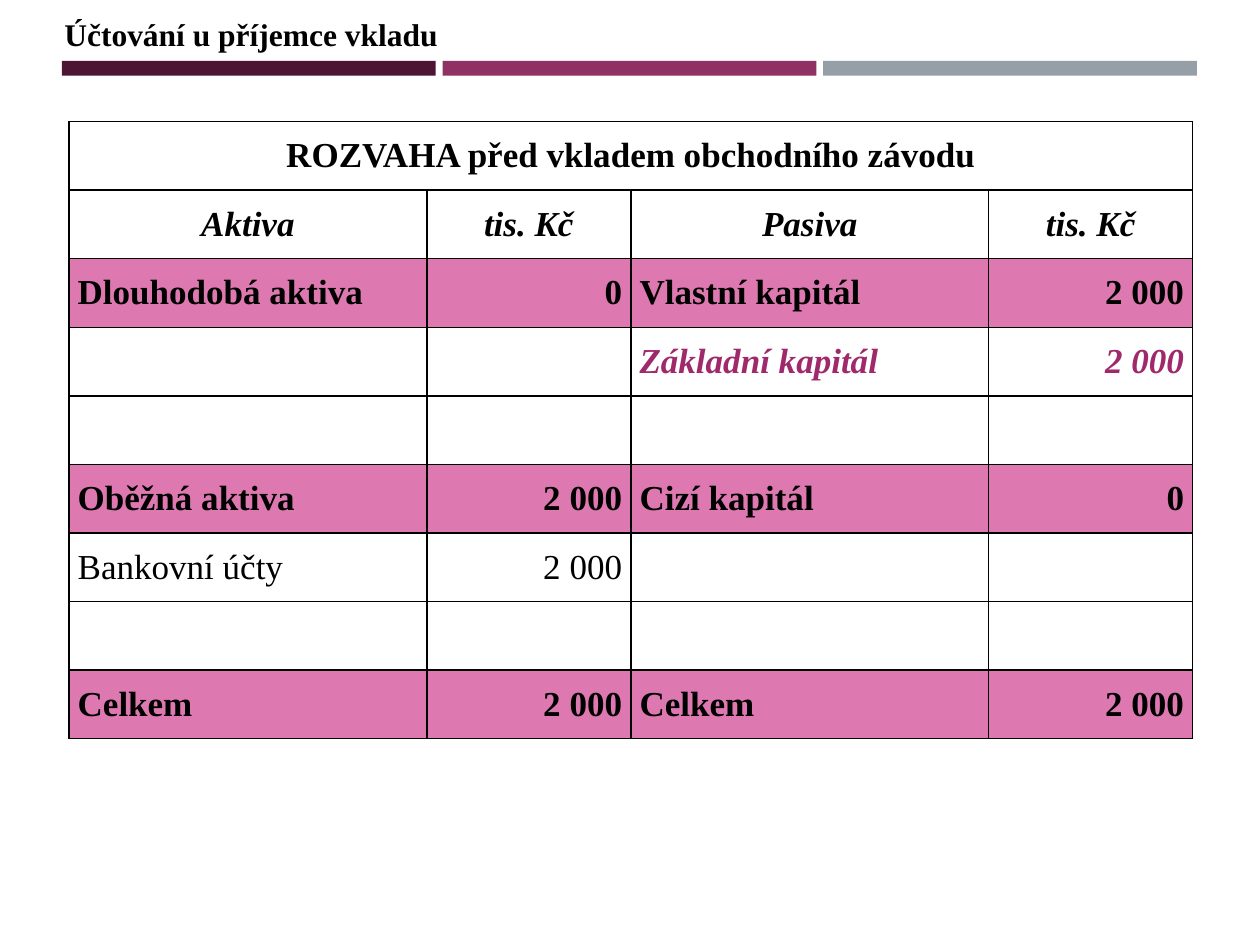
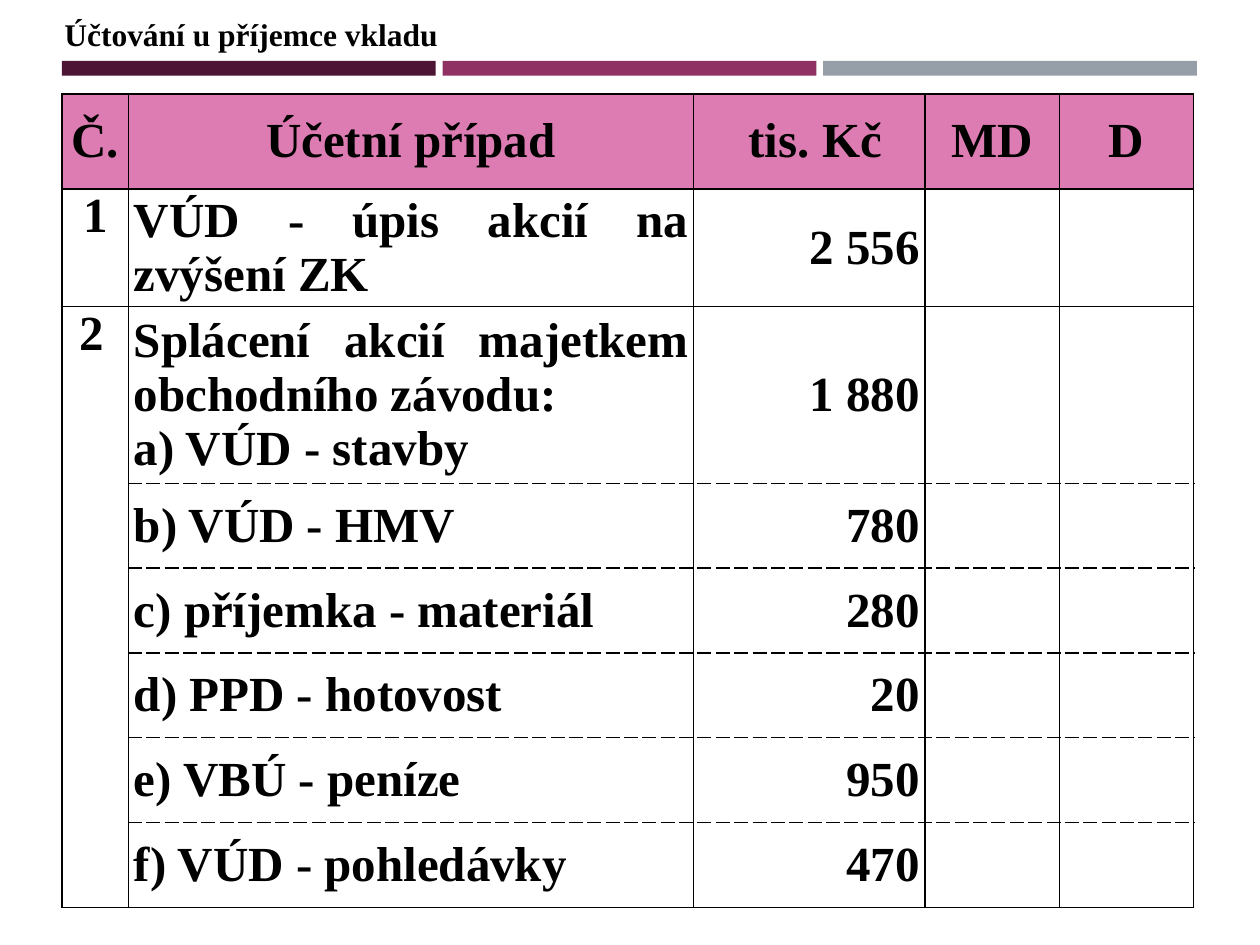
"""Build two slides on booking a contribution at its recipient."""
from dataclasses import dataclass
from typing import Optional

from lxml.etree import SubElement
from pptx import Presentation
from pptx.dml.color import RGBColor
from pptx.enum.shapes import MSO_SHAPE
from pptx.enum.text import MSO_ANCHOR, MSO_AUTO_SIZE, PP_ALIGN
from pptx.oxml.ns import qn
from pptx.util import Pt

BLACK = RGBColor(0x00, 0x00, 0x00)
PLUM = RGBColor(0x4D, 0x14, 0x34)
WINE = RGBColor(0x90, 0x31, 0x63)
GREY = RGBColor(0x96, 0x9F, 0xA7)
PINK = RGBColor(0xDD, 0x79, 0xB0)
ROSE = RGBColor(0xDD, 0x7C, 0xB2)
BERRY = RGBColor(0x9F, 0x29, 0x6B)
FONT = "Times New Roman"
TITLE = "Účtování u příjemce vkladu"
LEFT, MID, RIGHT, FULL = PP_ALIGN.LEFT, PP_ALIGN.CENTER, PP_ALIGN.RIGHT, PP_ALIGN.JUSTIFY
BANDS = (PLUM, WINE, GREY)


@dataclass
class Cell:
    text: str = ""
    align: PP_ALIGN = LEFT
    bold: bool = True
    slant: bool = False
    ink: RGBColor = BLACK
    fill: Optional[RGBColor] = None
    anchor: MSO_ANCHOR = MSO_ANCHOR.MIDDLE
    dashes: str = ""


@dataclass
class Grid:
    left: float
    top: float
    cols: list[float]
    rows: list[float]
    size: float
    pad: float
    cells: list[list[Cell]]
    merge: tuple[int, int, int, int]


def write(para, text: str, size: float, cell: Cell) -> None:
    """Add one run in the style of the cell."""
    para.alignment = cell.align
    run = para.add_run()
    run.text = text
    font = run.font
    font.name, font.size = FONT, Pt(size)
    font.bold, font.italic = cell.bold, cell.slant
    font.color.rgb = cell.ink


def edge(box, dashes: str) -> None:
    """Rule the four sides, dashing those named."""
    props = box._tc.get_or_add_tcPr()
    for side in "LRTB":
        line = SubElement(props, qn(f"a:ln{side}"), w=str(Pt(1)))
        fill = SubElement(line, qn("a:solidFill"))
        SubElement(fill, qn("a:srgbClr"), val=str(BLACK))
        SubElement(line, qn("a:prstDash"), val="dash" if side in dashes else "solid")


def paint(box, cell: Cell, grid: Grid) -> None:
    """Fill one table cell with rules, colour and text."""
    edge(box, cell.dashes)
    if cell.fill is None:
        box.fill.background()
    else:
        box.fill.solid()
        box.fill.fore_color.rgb = cell.fill
    box.margin_left = box.margin_right = Pt(grid.pad)
    box.margin_top = box.margin_bottom = Pt(0)
    box.vertical_anchor = cell.anchor
    if cell.text:
        frame = box.text_frame
        for i, text in enumerate(cell.text.split("\n")):
            para = frame.add_paragraph() if i else frame.paragraphs[0]
            write(para, text, grid.size, cell)


def draw(slide, grid: Grid) -> None:
    """Draw a grid as a table."""
    frame = slide.shapes.add_table(
        len(grid.rows), len(grid.cols), Pt(grid.left), Pt(grid.top),
        Pt(sum(grid.cols)), Pt(sum(grid.rows)))
    table = frame.table
    table.first_row = table.horz_banding = False
    for col, width in zip(table.columns, grid.cols):
        col.width = Pt(width)
    for row, height in zip(table.rows, grid.rows):
        row.height = Pt(height)
    for r, line in enumerate(grid.cells):
        for c, cell in enumerate(line):
            paint(table.cell(r, c), cell, grid)
    r1, c1, r2, c2 = grid.merge
    table.cell(r1, c1).merge(table.cell(r2, c2))


def brand(layout, slide) -> None:
    """Move three colour bands onto the layout."""
    for i, tone in enumerate(BANDS):
        band = slide.shapes.add_shape(
            MSO_SHAPE.RECTANGLE, Pt(35.4 + 217.5 * i), Pt(34.8), Pt(213.6), Pt(8.4))
        band.shadow.inherit = False
        band.fill.solid()
        band.fill.fore_color.rgb = tone
        band.line.fill.background()
        layout.shapes.element.append(band.element)


def head(slide) -> None:
    """Place and style the slide title."""
    title = slide.shapes.title
    title.left, title.top, title.width, title.height = Pt(29.6), Pt(5.2), Pt(230.4), Pt(29)
    frame = title.text_frame
    frame.word_wrap = False
    frame.auto_size = MSO_AUTO_SIZE.SHAPE_TO_FIT_TEXT
    frame.vertical_anchor = MSO_ANCHOR.TOP
    write(frame.paragraphs[0], TITLE, 18, Cell())


def pair(name: str, sum_: str, align: PP_ALIGN = LEFT, **look) -> list[Cell]:
    """Make a name cell and its amount cell."""
    return [Cell(name, align, **look), Cell(sum_, RIGHT, **look)]


def both(name: str, sum_: str, name2: str, sum2: str) -> list[Cell]:
    """Make a pink row with both balance sides."""
    return pair(name, sum_, fill=PINK) + pair(name2, sum2, FULL, fill=PINK)


def sheet() -> Grid:
    """Lay out the opening balance sheet."""
    void = pair("", "")
    cells = [
        [Cell("ROZVAHA před vkladem obchodního závodu", MID), Cell(), Cell(), Cell()],
        [Cell(t, MID, slant=True) for t in ("Aktiva", "tis. Kč", "Pasiva", "tis. Kč")],
        both("Dlouhodobá aktiva", "0", "Vlastní kapitál", "2 000"),
        void + pair("Základní kapitál", "2 000", FULL, slant=True, ink=BERRY),
        void + void,
        both("Oběžná aktiva", "2 000", "Cizí kapitál", "0"),
        pair("Bankovní účty", "2 000", bold=False) + void,
        void + void,
        both("Celkem", "2 000", "Celkem", "2 000"),
    ]
    return Grid(39.4, 69.5, [204.5, 116.6] * 2, [39.2] * 9, 20, 5, cells, (0, 0, 0, 3))


def ledger() -> Grid:
    """Lay out the list of entries."""
    heads = ("Č.", "Účetní případ", " tis. Kč", "MD", "D")
    parts = [
        ("Splácení akcií majetkem obchodního závodu:\na) VÚD - stavby", "1 880"),
        ("b) VÚD - HMV", "780"),
        ("c) příjemka - materiál", "280"),
        ("d) PPD - hotovost", "20"),
        ("e) VBÚ - peníze", "950"),
        ("f) VÚD - pohledávky", "470"),
    ]
    top = MSO_ANCHOR.TOP
    cells = [
        [Cell(t, MID, fill=ROSE) for t in heads],
        [Cell("1", MID, anchor=top),
         *pair("VÚD - úpis akcií na zvýšení ZK", "2 556", FULL), Cell(), Cell()],
    ]
    last = len(parts) - 1
    for i, (name, sum_) in enumerate(parts):
        dashes = ("T" if i else "") + ("B" if i < last else "")
        mark = Cell("" if i else " 2", anchor=top)
        cells.append([mark, *pair(name, sum_, FULL, dashes=dashes),
                      Cell(dashes=dashes), Cell(dashes=dashes)])
    return Grid(35.4, 53.6, [38.1, 322.7, 132.3, 77, 76.6],
                [54.4, 67.2, 100.8] + [48.5] * last, 28, 3, cells, (2, 0, 7, 0))


def main() -> None:
    """Build and save the deck."""
    deck = Presentation()
    deck.slide_width, deck.slide_height = Pt(720), Pt(540)
    layout = deck.slide_layouts[5]
    for i, grid in enumerate((sheet(), ledger())):
        slide = deck.slides.add_slide(layout)
        if i == 0:
            brand(layout, slide)
        head(slide)
        draw(slide, grid)
    deck.save("out.pptx")


if __name__ == "__main__":
    main()
